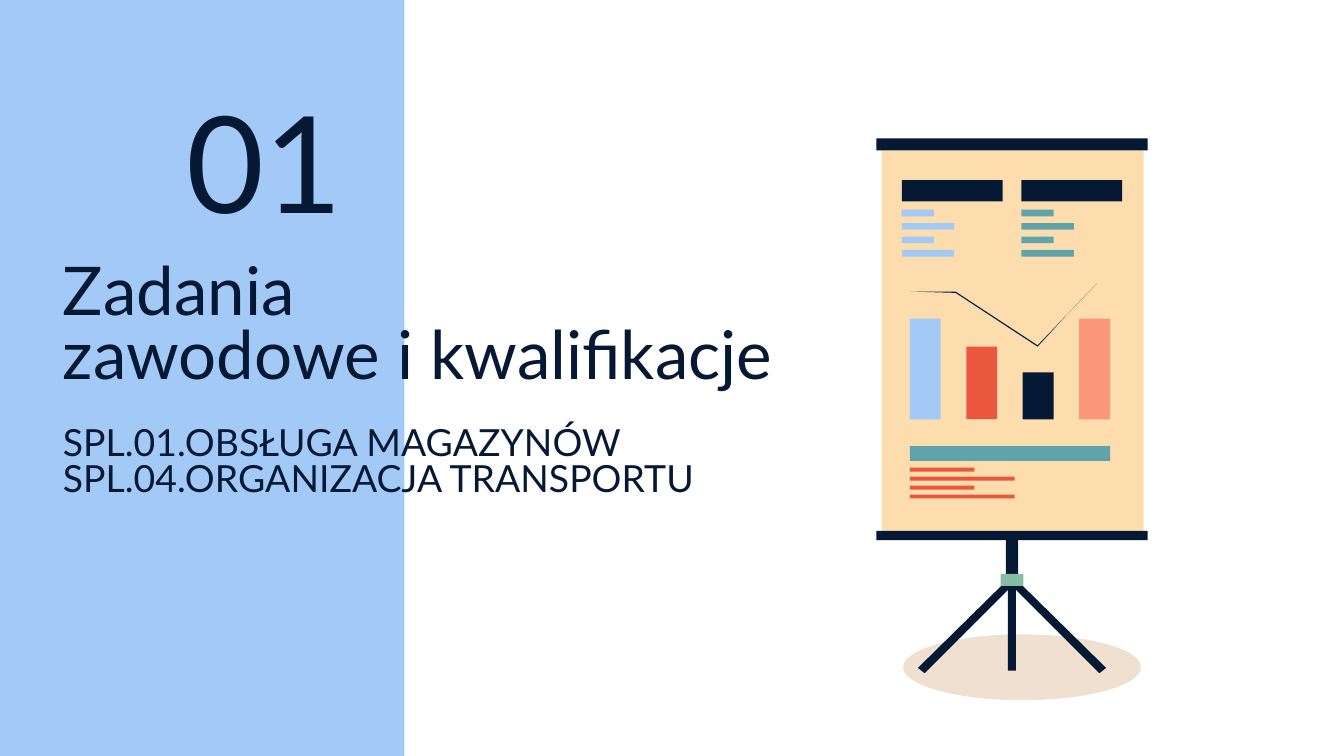
import pptx
import pptx.util
import pptx.dml.color
import pptx.enum.shapes
import pptx.enum.text
import pptx.oxml.ns
import lxml.etree

Inches = pptx.util.Inches
Pt = pptx.util.Pt
SHAPE = pptx.enum.shapes.MSO_SHAPE
ANCHOR = pptx.enum.text.MSO_ANCHOR

NAVY, BLUE, TEAL, RED = "051934", "A3CAF7", "5FA4AB", "EB573D"
SALMON, CREAM, GREEN, BROWN = "FA9778", "FDDCAE", "85BCA2", "B45F06"
SLIDE_W = 10
SLIDE_H = SLIDE_W * 9 / 16


def color(hex_value):
    return pptx.dml.color.RGBColor.from_string(hex_value)


def paint(sp, fill):
    sp.shadow.inherit = False
    sp.fill.solid()
    sp.fill.fore_color.rgb = color(fill)
    sp.line.fill.background()
    return sp


def add_block(s, x, y, w, h, fill, kind=SHAPE.RECTANGLE):
    return paint(s.shapes.add_shape(kind, Inches(x), Inches(y), Inches(w), Inches(h)), fill)


def add_outline(s, x, y, points, fill):
    pts = [(Inches(x + dx), Inches(y + dy)) for dx, dy in points]
    builder = s.shapes.build_freeform(*pts[0], scale=1.0)
    builder.add_line_segments(pts[1:], close=True)
    return paint(builder.convert_to_shape(), fill)


def add_text(s, x, y, w, h, anchor, paragraphs):
    tf = s.shapes.add_textbox(Inches(x), Inches(y), Inches(w), Inches(h)).text_frame
    frame = {"word_wrap": True, "vertical_anchor": anchor}
    frame.update({f"margin_{side}": Inches(0.1) for side in ("left", "top", "right", "bottom")})
    for name, value in frame.items():
        setattr(tf, name, value)
    for i, (text, size, para_format) in enumerate(paragraphs):
        p = tf.add_paragraph() if i else tf.paragraphs[0]
        p.text = text  # \v is a line break
        for name, value in para_format.items():
            setattr(p, name, value)
        for r in p.runs:
            for name, value in {"name": "Lato", "size": Pt(size)}.items():
                setattr(r.font, name, value)
            r.font.color.rgb = color(NAVY)


def add_heading(s, x, y):
    add_text(s, x, y + 0.66, 6.15, 2.3, ANCHOR.MIDDLE, [
        ("Zadania \vzawodowe i kwalifikacje", 36, {"line_spacing": 0.8}),
        ("SPL.01.OBSŁUGA MAGAZYNÓW\vSPL.04.ORGANIZACJA TRANSPORTU", 20,
         {"line_spacing": 0.8, "space_before": Pt(19)}),
    ])
    add_text(s, x + 0.92, y, 2.75, 0.86, ANCHOR.BOTTOM, [("01", 72, {})])


def add_tripod(s, x, y):
    # Floor shadow
    sp = add_block(s, x + 0.2, y + 0.77, 1.77, 0.49, BROWN, SHAPE.OVAL)
    clr = sp.fill._xPr.find(".//" + pptx.oxml.ns.qn("a:srgbClr"))
    lxml.etree.SubElement(clr, pptx.oxml.ns.qn("a:alpha"), val="19000")

    # Mirrored side legs, then middle leg, pole and clamp
    mid = x + 1.01
    leg = [(-0.02, 0.35), (-0.7, 1.02), (-0.65, 1.06), (0.02, 0.39)]
    for side in (1, -1):
        add_outline(s, mid, y, [(side * dx, dy) for dx, dy in leg], NAVY)
    for top, w, h, fill in ((0.27, 0.06, 0.77, NAVY), (0, 0.09, 0.41, NAVY),
                            (0.32, 0.17, 0.09, GREEN)):
        add_block(s, mid - w / 2, y + top, w, h, fill)


def add_text_lines(s, x, y, pitch, h, widths, fill):
    for i in range(4):
        add_block(s, x, y + i * pitch, widths[i % 2], h, fill)


def add_board(s, x, y):
    # Sheet and its rails
    add_block(s, x + 0.04, y + 0.09, 1.95, 2.83, CREAM)
    add_block(s, x, y + 2.92, 2.02, 0.07, NAVY)
    add_block(s, x, y, 2.02, 0.09, NAVY)

    # Two columns of text
    for dx, fill in ((0.19, BLUE), (1.08, TEAL)):
        add_block(s, x + dx, y + 0.31, 0.75, 0.16, NAVY)
        add_text_lines(s, x + dx, y + 0.53, 0.1, 0.05, (0.24, 0.39), fill)

    # Bottom paragraph
    add_block(s, x + 0.25, y + 2.29, 1.49, 0.11, TEAL)
    add_text_lines(s, x + 0.25, y + 2.45, 0.2 / 3, 0.03, (0.48, 0.78), RED)

    # Decorative bars on a common base
    for i, (h, fill) in enumerate(((0.75, BLUE), (0.54, RED), (0.35, NAVY), (0.75, SALMON))):
        add_block(s, x + 0.25 + i * 0.42, y + 2.09 - h, 0.23, h, fill)

    # Tapered trend line
    add_outline(s, x, y, [(1.64, 1.08), (1.42, 1.31), (1.2, 1.54), (0.59, 1.14), (0.25, 1.14),
                          (0.59, 1.15), (1.2, 1.55), (1.42, 1.31)], NAVY)


def main():
    prs = pptx.Presentation()
    prs.slide_width, prs.slide_height = Inches(SLIDE_W), Inches(SLIDE_H)
    s = prs.slides.add_slide(prs.slide_layouts[6])
    add_block(s, 0, 0, 3.01, SLIDE_H, BLUE)  # side panel
    add_heading(s, 0.37, 1.03)
    add_tripod(s, 6.52, 3.95)
    add_board(s, 6.52, 1.03)
    prs.save("out.pptx")


if __name__ == "__main__":
    main()
